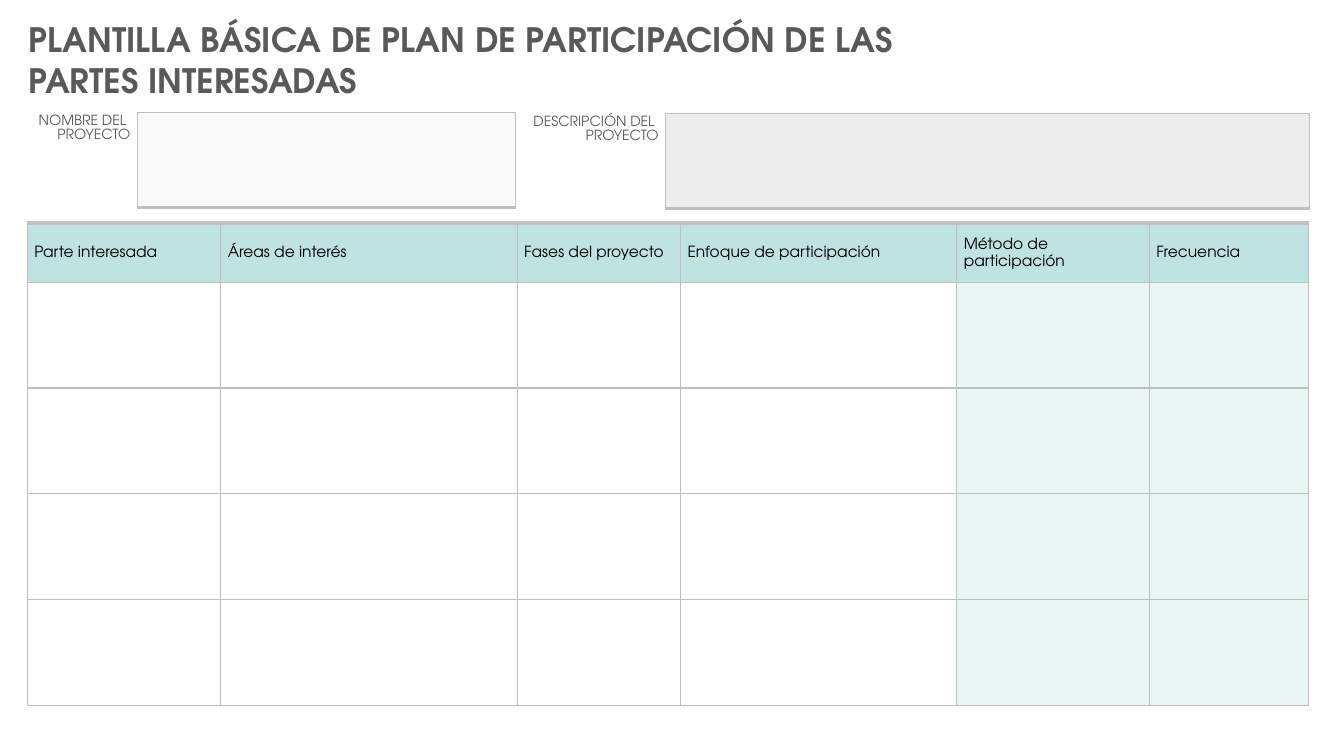
from lxml import etree
from pptx import Presentation
from pptx.dml.color import RGBColor
from pptx.enum import text
from pptx.oxml import ns
from pptx.util import Inches, Pt

FONT = "TeX Gyre Adventor"
GRAY = RGBColor(0x59, 0x59, 0x59)
BLACK = RGBColor(0, 0, 0)
WHITE = RGBColor(0xFF, 0xFF, 0xFF)
BORDER = RGBColor(0xBF, 0xBF, 0xBF)
TEAL = RGBColor(0xBE, 0xE3, 0xE0)
PALE_TEAL = RGBColor(0xE9, 0xF6, 0xF4)
NAME_FILL = RGBColor(0xF9, 0xF9, 0xF9)
DESCRIPTION_FILL = RGBColor(0xED, 0xED, 0xED)


def add_plain_table(page, left, top, widths, heights):
    """Add an unbanded table with the given column widths and row heights in inches."""
    table = page.shapes.add_table(
        len(heights), len(widths), Inches(left), Inches(top),
        Inches(sum(widths)), Inches(sum(heights))).table
    table.first_row = table.horz_banding = False
    for column, width in zip(table.columns, widths):
        column.width = Inches(width)
    for row, height in zip(table.rows, heights):
        row.height = Inches(height)
    return table


def format_cell(cell, fill, borders, size, color):
    """Style a cell; borders are left, right, top, bottom widths in points, 0 for none."""
    cell.margin_left = cell.margin_right = Inches(0.07)
    cell.margin_top = cell.margin_bottom = 0
    properties = cell._tc.get_or_add_tcPr()
    for side, width in zip("LRTB", borders):
        line = etree.SubElement(properties, ns.qn(f"a:ln{side}"), w=str(Pt(width)))
        if width:
            solid = etree.SubElement(line, ns.qn("a:solidFill"))
            etree.SubElement(solid, ns.qn("a:srgbClr"), val=str(BORDER))
        else:
            etree.SubElement(line, ns.qn("a:noFill"))
    if fill is None:
        cell.fill.background()
    else:
        cell.fill.solid()
        cell.fill.fore_color.rgb = fill
    para = cell.text_frame.paragraphs[0]
    para.line_spacing = 1.15
    for span in para.runs:
        span.font.name = FONT
        span.font.size = Pt(size)
        span.font.color.rgb = color


deck = Presentation()
deck.slide_width, deck.slide_height = Inches(13.33), Inches(7.5)
page = deck.slides.add_slide(deck.slide_layouts[5])

title = page.shapes.title
title.left, title.top = Inches(0.18), Inches(0.14)
title.width, title.height = Inches(9.13), Inches(0.5)
frame = title.text_frame
frame.text = "PLANTILLA BÁSICA DE PLAN DE PARTICIPACIÓN DE LAS PARTES INTERESADAS"
frame.word_wrap = True
frame.auto_size = text.MSO_AUTO_SIZE.SHAPE_TO_FIT_TEXT
frame.vertical_anchor = text.MSO_ANCHOR.TOP
para = frame.paragraphs[0]
para.alignment = text.PP_ALIGN.LEFT
font = para.runs[0].font
font.name, font.size, font.bold = FONT, Pt(24), True
font.color.rgb = GRAY

# Stakeholder table
headers = ["Parte interesada", "Áreas de interés", "Fases del proyecto",
           "Enfoque de participación", "Método de participación", "Frecuencia"]
plan = add_plain_table(page, 0.27, 2.21, [1.92, 2.94, 1.62, 2.74, 1.91, 1.58],
                       [0.59] + [1.05] * 4)
for row_index, row in enumerate(plan.rows):
    for column_index, cell in enumerate(row.cells):
        if row_index == 0:
            cell.text_frame.text = headers[column_index]
            cell.vertical_anchor = text.MSO_ANCHOR.MIDDLE
            fill, top_width = TEAL, 3
        else:
            fill = WHITE if column_index < 4 else PALE_TEAL
            top_width = 1
        format_cell(cell, fill, (1, 1, top_width, 1), 11, BLACK)

# Project name and description fields
fields = [
    ("NOMBRE DEL \vPROYECTO", 0.18, 1.12, [1.18, 3.75], NAME_FILL),
    ("DESCRIPCIÓN DEL \vPROYECTO", 5.11, 1.13, [1.49, 6.39], DESCRIPTION_FILL),
]
for label, left, top, widths, fill in fields:
    field = add_plain_table(page, left, top, widths, [0.94])
    label_cell, value_cell = field.rows[0].cells
    label_cell.text_frame.text = label
    label_cell.text_frame.paragraphs[0].alignment = text.PP_ALIGN.RIGHT
    format_cell(label_cell, None, (0, 1, 0, 0), 10, GRAY)
    format_cell(value_cell, fill, (1, 1, 1, 2.25), 10, GRAY)

deck.save("out.pptx")
